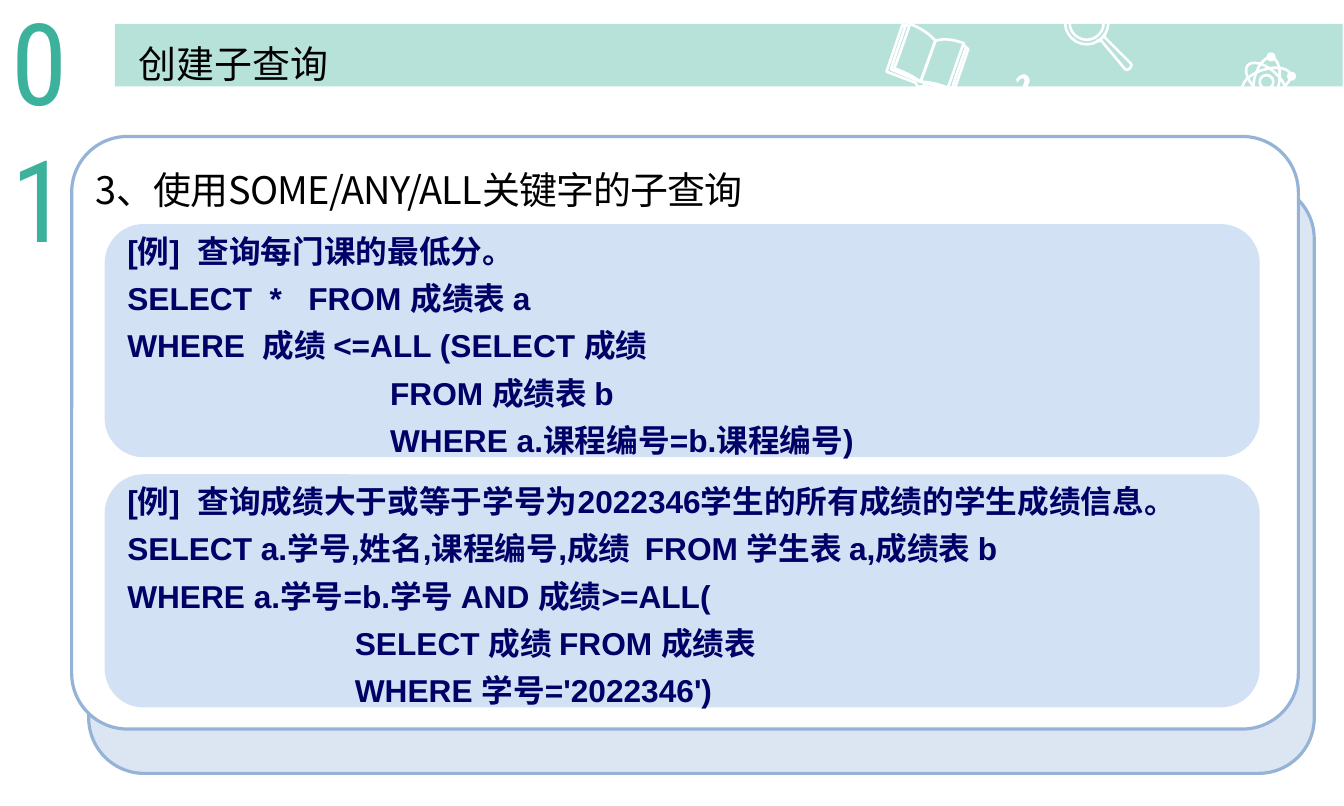
import lxml.etree
import pptx
import pptx.dml.color
import pptx.enum.shapes
import pptx.enum.text
import pptx.oxml.ns
import pptx.util

Inches = pptx.util.Inches
Pt = pptx.util.Pt
SHAPES = pptx.enum.shapes.MSO_SHAPE
ANCHORS = pptx.enum.text.MSO_ANCHOR
ALIGNS = pptx.enum.text.PP_ALIGN
CHINESE_FONT = "Noto Sans CJK SC"
TEAL, WHITE, NAVY = "3CB19B", "FFFFFF", "000066"
ICON_LINE = 1.63

# Outlines start at a point; two numbers add a line, six add a Bezier curve.
BOOK_COVERS = [
    [(.17, .02), (.14, .01), (0, .42), (.26, .52), (.26, .52, .26, .54, .28, .55)],
    [(.28, .55), (.31, .56, .33, .54, .33, .54), (.58, .63), (.72, .22), (.7, .21)],
    [(.3, .51), (.3, .51, .21, .47, .04, .4), (.08, .27, .14, .11, .17, .01), (.2, .02)],
    [(.3, .51), (.3, .51, .4, .53, .57, .59), (.61, .45, .67, .3, .7, .2), (.67, .19)],
]
BOOK_PAGES = [
    [(.3, .51), (.3, .51, .25, .46, .07, .39), (.12, .26, .17, .11, .21, 0),
     (.38, .07, .43, .15, .43, .15)],
    [(.3, .51), (.3, .51, .37, .5, .54, .56), (.59, .43, .64, .27, .68, .17),
     (.52, .11, .43, .15, .43, .15)],
]
MAGNIFIER_HANDLE = [(.36, .29), (.36, .33), (.59, .56), (.6, .58, .58, .6, .58, .6),
                    (.58, .6, .56, .62, .54, .61), (.33, .36), (.28, .36)]
QUESTION_HOOK = [(.11, .12), (.07, .14), (.05, .12, .06, .1, .07, .08),
                 (.08, .06, .07, .03, .05, .04), (.03, .05, .02, .06, .01, .08), (0, .05),
                 (.02, .02, .06, -.01, .09, .01), (.13, .04, .12, .07, .11, .09),
                 (.1, .1, .1, .11, .11, .12)]

LOWEST_SCORES = [
    ("[例]  查询每门课的最低分。", 0),
    ("SELECT  *   FROM 成绩表 a", 0),
    ("WHERE  成绩 <=ALL (SELECT 成绩", 0),
    ("FROM 成绩表 b", 2.31),
    ("WHERE a.课程编号=b.课程编号)", 2.31),
]
SCORES_ABOVE_STUDENT = [
    ("[例]  查询成绩大于或等于学号为2022346学生的所有成绩的学生成绩信息。", 0),
    ("SELECT a.学号,姓名,课程编号,成绩  FROM 学生表 a,成绩表 b", 0),
    ("WHERE a.学号=b.学号 AND 成绩>=ALL(", 0),
    ("SELECT 成绩 FROM 成绩表", 2),
    ("WHERE 学号='2022346')", 2),
]


def color(value):
    return pptx.dml.color.RGBColor.from_string(value)


def write(para, text, size, fill, font=CHINESE_FONT, bold=False, spacing=None,
          indent=0, tracking=None):
    """Fill a paragraph with one formatted span."""
    para.alignment = ALIGNS.LEFT
    if spacing:
        para.line_spacing = spacing
    if indent:
        properties = para._p.get_or_add_pPr()
        properties.set("marL", str(Inches(indent)))
        properties.set("indent", "0")
    span = para.add_run()
    span.text = text
    span.font.size = Pt(size)
    span.font.bold = bold
    span.font.color.rgb = color(fill)
    span.font.name = font
    properties = span.font._element
    lxml.etree.SubElement(properties, pptx.oxml.ns.qn("a:ea"), typeface=CHINESE_FONT)
    if tracking:
        properties.set("spc", str(round(tracking * 100)))


def paint(shape, fill=None, line=None, width=1, alpha=None):
    shape.shadow.inherit = False
    if fill:
        shape.fill.solid()
        shape.fill.fore_color.rgb = color(fill)
        if alpha:
            choice = shape.element.spPr.find(".//" + pptx.oxml.ns.qn("a:srgbClr"))
            lxml.etree.SubElement(choice, pptx.oxml.ns.qn("a:alpha"), val=str(alpha * 1000))
    else:
        shape.fill.background()
    if line:
        shape.line.color.rgb = color(line)
        shape.line.width = Pt(width)
    else:
        shape.line.fill.background()
    return shape


def add_shape(page, kind, box, **style):
    return paint(page.shapes.add_shape(kind, *map(Inches, box)), **style)


def add_text_box(page, box, text, **style):
    frame = page.shapes.add_textbox(*map(Inches, box)).text_frame
    frame.word_wrap = True
    write(frame.paragraphs[0], text, **style)


def add_outline(page, left, top, outline, close=False, **style):
    points = [outline[0]]
    for step in outline[1:]:
        if len(step) == 2:
            points.append(step)
            continue
        controls = [points[-1], step[:2], step[2:4], step[4:]]
        for t in (k / 8 for k in range(1, 9)):
            weights = ((1 - t) ** 3, 3 * t * (1 - t) ** 2, 3 * t * t * (1 - t), t ** 3)
            points.append(tuple(sum(w * c[axis] for w, c in zip(weights, controls))
                                for axis in (0, 1)))
    placed = [(Inches(left + x), Inches(top + y)) for x, y in points]
    builder = page.shapes.build_freeform(*placed[0])
    builder.add_line_segments(placed[1:], close=close)
    paint(builder.convert_to_shape(), **style)


def add_circle(page, x, y, diameter, **style):
    box = (x - diameter / 2, y - diameter / 2, diameter, diameter)
    add_shape(page, SHAPES.OVAL, box, **style)


def add_icons(page, left, top):
    """Draw book, question mark, magnifier and atom from the band's corner."""
    stroke = {"line": WHITE, "width": ICON_LINE}
    for outline in BOOK_COVERS:
        add_outline(page, left + 6.78, top, outline, **stroke)
    for outline in BOOK_PAGES:
        add_outline(page, left + 6.78, top, outline, close=True, **stroke)
    add_outline(page, left + 7.92, top + .44, QUESTION_HOOK, close=True, fill=WHITE)
    for diameter in (.38, .3):
        add_circle(page, left + 8.54, top - .01, diameter, **stroke)
    add_outline(page, left + 8.34, top - .21, MAGNIFIER_HANDLE, **stroke)
    x, y = left + 10.12, top + .51
    for angle in (12, 72, 132):
        orbit = add_shape(page, SHAPES.OVAL, (x - .11, y - .22, .22, .44), **stroke)
        orbit.rotation = angle
    add_circle(page, x, y, .12, **stroke)
    for dx, dy in ((.22, -.05), (-.22, .08), (.04, -.22)):
        add_circle(page, x + dx, y + dy, .08, fill=WHITE)


def add_header(page, box, title):
    left, top, width, height = box
    add_shape(page, SHAPES.RECTANGLE, box, fill=TEAL, alpha=37)
    add_icons(page, left, top)
    holder = page.shapes.title
    holder.element.getparent().append(holder.element)
    holder.left, holder.top = Inches(left + .11), Inches(top + .1)
    holder.width, holder.height = Inches(1.87), Inches(.5)
    frame = holder.text_frame
    frame.word_wrap = False
    frame.auto_size = pptx.enum.text.MSO_AUTO_SIZE.NONE
    frame.vertical_anchor = ANCHORS.TOP
    write(frame.paragraphs[0], title, size=24, fill="000000")


def add_example(page, box, lines):
    panel = add_shape(page, SHAPES.FLOWCHART_ALTERNATE_PROCESS, box, fill="C6D9F1", alpha=78)
    frame = panel.text_frame
    frame.word_wrap = True
    frame.vertical_anchor = ANCHORS.MIDDLE
    for number, (text, indent) in enumerate(lines):
        para = frame.add_paragraph() if number else frame.paragraphs[0]
        write(para, text, size=20, fill=NAVY, font="Arial", bold=True,
              spacing=Pt(30), indent=indent)


def add_card(page, box, heading, examples):
    left, top, width, height = box
    back = (left + .15, top + .41, width - .01, height - .02)
    for card_box, fill in ((back, "DCE6F2"), (box, WHITE)):
        card = add_shape(page, SHAPES.ROUNDED_RECTANGLE, card_box,
                         fill=fill, line="95B3D7", width=2)
        card.adjustments[0] = .094
    add_text_box(page, (left + .11, top + .1, 10.57, 1.13), heading, size=24,
                 fill="000000", spacing=1.3, tracking=-.5)
    for number, lines in enumerate(examples):
        add_example(page, (left + .29, top + .77 + 2.2 * number, 10.15, 2.05), lines)


def main():
    deck = pptx.Presentation()
    deck.slide_width, deck.slide_height = pptx.util.Cm(30), pptx.util.Cm(18)
    page = deck.slides.add_slide(deck.slide_layouts[5])
    add_header(page, (1.01, .21, 10.79, .55), "创建子查询")
    add_card(page, (.63, 1.2, 10.78, 5.21), "3、使用SOME/ANY/ALL关键字的子查询",
             [LOWEST_SCORES, SCORES_ABOVE_STUDENT])
    add_text_box(page, (0, -.12, .8, 2.5), "01", size=72, fill=TEAL, font="Roboto Condensed")
    deck.save("out.pptx")


if __name__ == "__main__":
    main()
